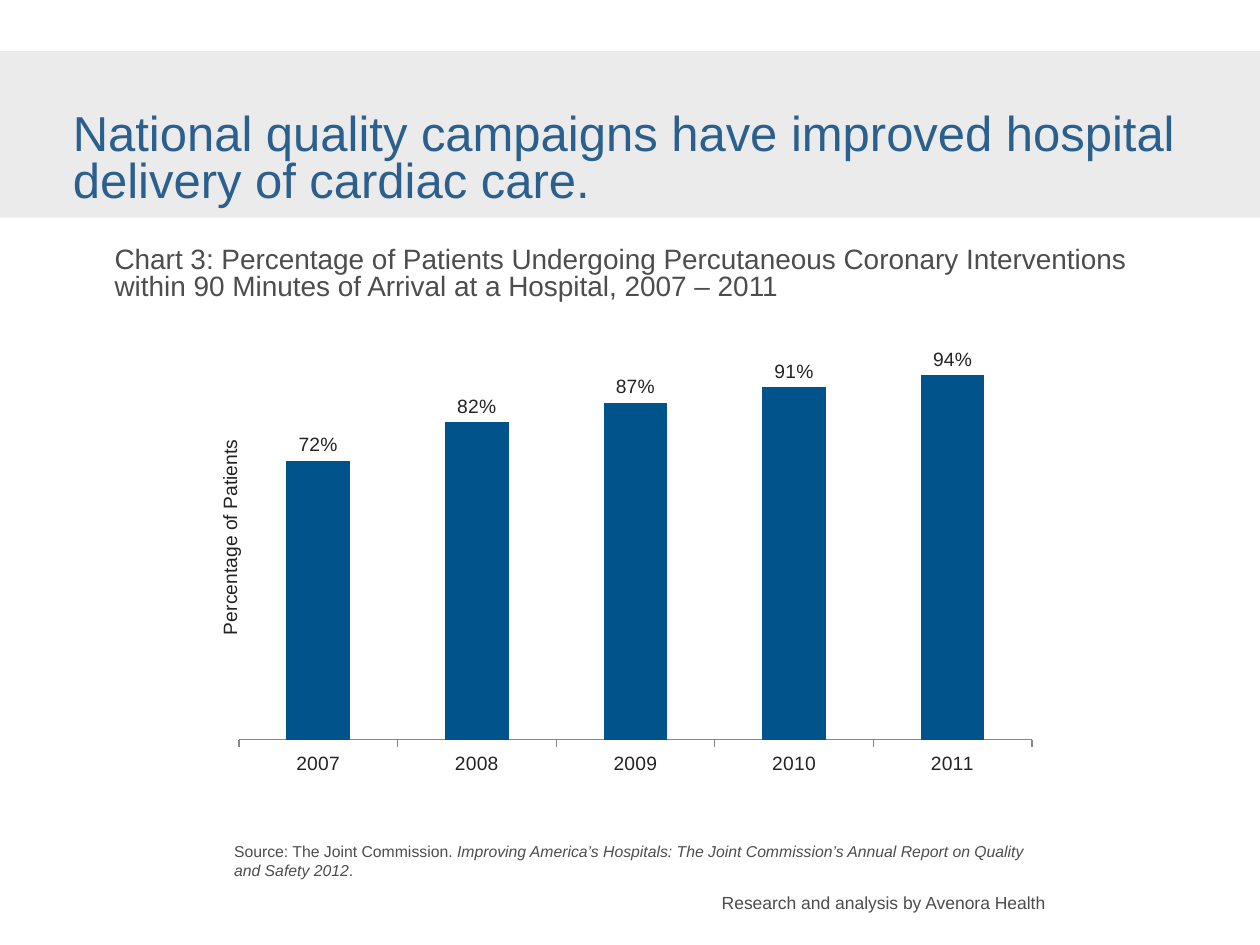
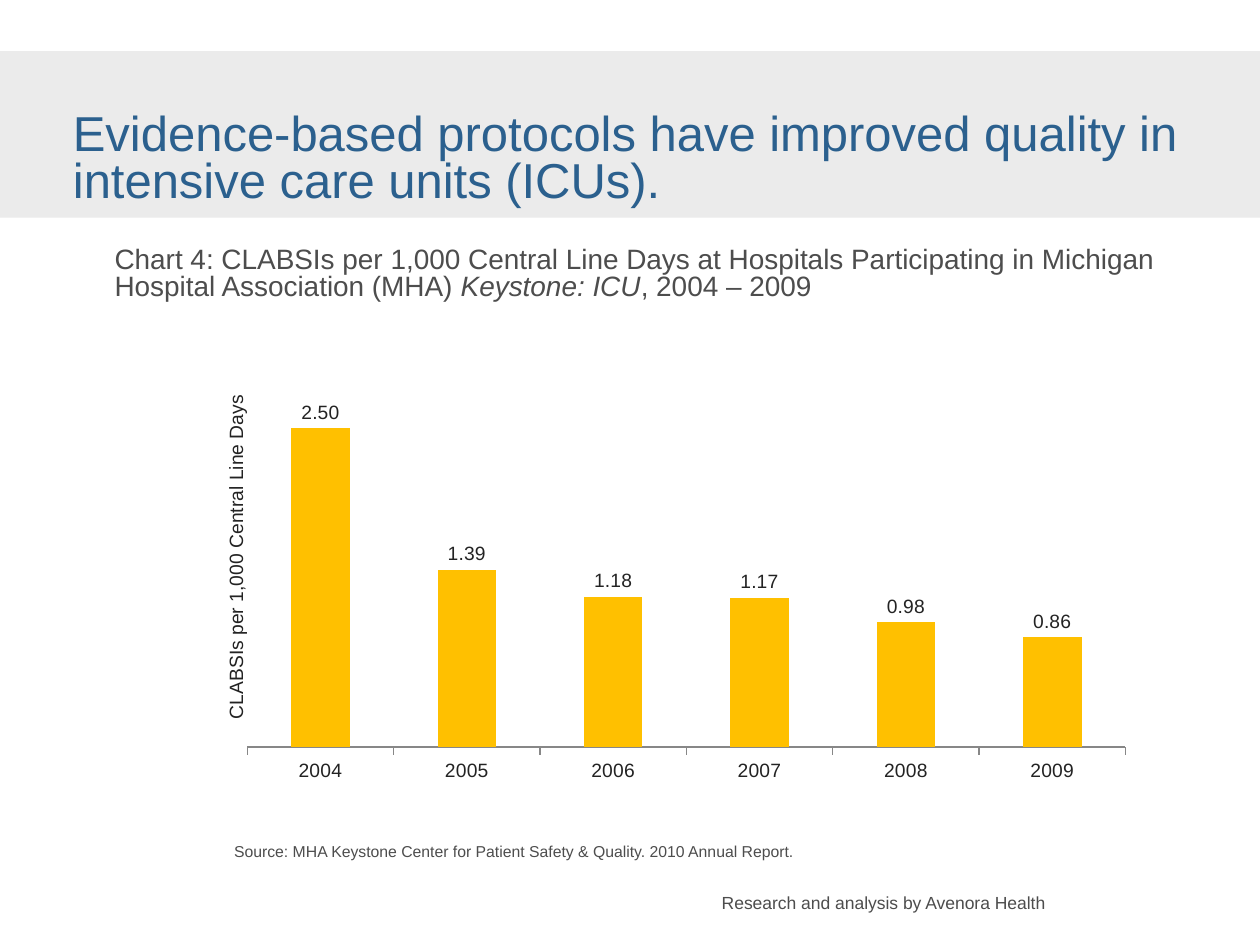
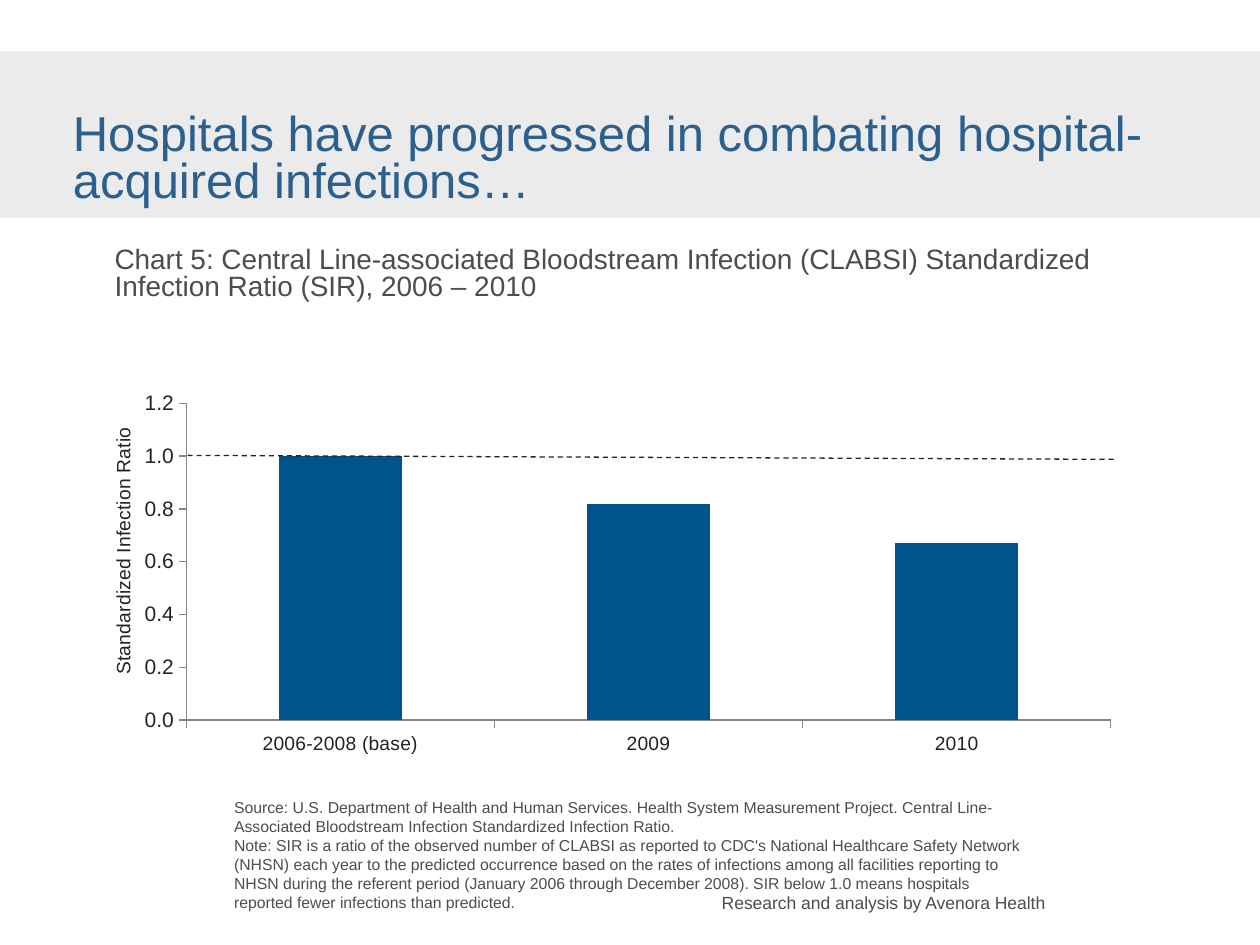
from lxml.etree import Element, SubElement
from pptx import Presentation
from pptx.chart.data import CategoryChartData
from pptx.dml.color import RGBColor
from pptx.enum.chart import XL_CHART_TYPE, XL_LABEL_POSITION, XL_TICK_LABEL_POSITION, XL_TICK_MARK
from pptx.enum.dml import MSO_LINE
from pptx.enum.shapes import MSO_CONNECTOR, MSO_SHAPE
from pptx.enum.text import MSO_ANCHOR, PP_ALIGN
from pptx.oxml.ns import qn
from pptx.util import Cm, Pt

BAND = RGBColor(0xEB, 0xEB, 0xEB)
TITLE = RGBColor(0x2B, 0x60, 0x8E)
GREY = RGBColor(0x4D, 0x4D, 0x4D)
INK = RGBColor(0x23, 0x23, 0x23)
AXIS = RGBColor(0x87, 0x87, 0x87)
BLUE = RGBColor(0x00, 0x54, 0x8B)
GOLD = RGBColor(0xFF, 0xC0, 0x00)
FONT = "Arial"


def place(parent, **spots):
    """Set a manual chart layout; spots are fractions of the chart."""
    node = parent.find(qn("c:layout"))
    if node is None:
        node = Element(qn("c:layout"))
        parent.insert(0, node)
    manual = SubElement(node, qn("c:manualLayout"))
    if "w" in spots:
        SubElement(manual, qn("c:layoutTarget"), val="inner")
    for side in "xy":
        SubElement(manual, qn(f"c:{side}Mode"), val="edge")
    for side, share in spots.items():
        SubElement(manual, qn(f"c:{side}"), val=str(share))


class Deck:
    def __init__(self):
        self.file = Presentation()
        self.file.slide_width, self.file.slide_height = Cm(25.4), Cm(19.05)

    def start(self, title, head, source, top):
        """Add a slide with its band, title, chart heading, source and credit."""
        self.slide = self.file.slides.add_slide(self.file.slide_layouts[6])
        self.band()
        self.text(title, 1.47, 2.29, 22.86, 1.91, size=28, color=TITLE,
                  space=0.8, anchor=MSO_ANCHOR.BOTTOM)
        self.text(head, 2.31, 5, 21.41, 1.09, size=16, space=0.8, anchor=MSO_ANCHOR.BOTTOM)
        self.text(source, 4.72, top, 15.95, 0.8, size=9)
        self.text("Research and analysis by Avenora Health", 14.55, 17.98, 6.71, 0.43)

    def band(self):
        band = self.slide.shapes.add_shape(MSO_SHAPE.RECTANGLE, 0, Cm(1.03), Cm(25.4), Cm(3.36))
        band.shadow.inherit = False
        band.fill.solid()
        band.fill.fore_color.rgb = BAND
        band.line.fill.background()

    def text(self, text, left, top, width, height, size=10, color=GREY, space=None,
             anchor=MSO_ANCHOR.TOP, align=PP_ALIGN.LEFT, turn=0):
        """Add a text box; words between asterisks are italic."""
        box = self.slide.shapes.add_textbox(Cm(left), Cm(top), Cm(width), Cm(height))
        box.rotation = turn
        frame = box.text_frame
        frame.word_wrap = True
        frame.vertical_anchor = anchor
        frame.margin_left = frame.margin_right = frame.margin_top = frame.margin_bottom = 0
        for row, line in enumerate(text.split("\n")):
            para = frame.add_paragraph() if row else frame.paragraphs[0]
            para.alignment = align
            if space:
                para.line_spacing = space
            for part, words in enumerate(line.split("*")):
                run = para.add_run()
                run.text = words
                self.style(run.font, size, color)
                run.font.italic = part % 2 == 1

    def style(self, font, size, color=INK):
        font.name, font.size, font.bold = FONT, Pt(size), False
        font.color.rgb = color

    def side(self, text, mid, centre):
        """Add an upright label centred on the given point."""
        long, high = 7.4, 0.45
        self.text(text, mid - long / 2, centre - high / 2, long, high, size=11,
                  color=INK, align=PP_ALIGN.CENTER, turn=270)

    def chart(self, points, spot, plot, top, color=BLUE, form=None):
        """Add columns; form is the number format of their labels, if any."""
        data = CategoryChartData()
        data.categories = list(points)
        data.add_series("Series 1", list(points.values()))
        chart = self.slide.shapes.add_chart(
            XL_CHART_TYPE.COLUMN_CLUSTERED, *map(Cm, spot), data).chart
        chart.has_legend = chart.has_title = False
        self.style(chart.font, 11)
        place(chart._chartSpace.chart.plotArea, **dict(zip("xywh", plot)))

        bars = chart.plots[0]
        bars.gap_width = 150
        bars.vary_by_categories = False
        fill = bars.series[0].format.fill
        fill.solid()
        fill.fore_color.rgb = color
        if form:
            bars.has_data_labels = True
            labels = bars.data_labels
            labels.show_value = True
            labels.number_format, labels.number_format_is_linked = form, False
            labels.position = XL_LABEL_POSITION.OUTSIDE_END
            self.style(labels.font, 11)

        for axis in chart.category_axis, chart.value_axis:
            axis.has_major_gridlines = False
            axis.major_tick_mark = XL_TICK_MARK.OUTSIDE
            axis.tick_label_position = XL_TICK_LABEL_POSITION.NEXT_TO_AXIS
            axis.format.line.color.rgb = AXIS
            axis.format.line.width = Pt(0.75)
            self.style(axis.tick_labels.font, 11)
        scale = chart.value_axis
        scale.minimum_scale, scale.maximum_scale = 0, top
        scale.visible = not form
        return chart

    def scale(self, axis, title, step, form, **spots):
        """Format a shown value axis and put its title in place."""
        axis.major_unit = step
        labels = axis.tick_labels
        labels.number_format, labels.number_format_is_linked = form, False
        self.style(labels.font, 12)
        frame = axis.axis_title.text_frame
        frame.text = title
        frame._txBody.bodyPr.set("rot", "-5400000")
        self.style(frame.paragraphs[0].runs[0].font, 11)
        place(axis.axis_title._element, **spots)

    def dash(self, *ends):
        line = self.slide.shapes.add_connector(MSO_CONNECTOR.STRAIGHT, *map(Cm, ends))
        line.line.color.rgb = INK
        line.line.width = Pt(0.75)
        line.line.dash_style = MSO_LINE.DASH
        SubElement(line._element.spPr, qn("a:effectLst"))


def main():
    deck = Deck()

    deck.start(
        "National quality campaigns have improved hospital delivery of cardiac care.",
        "Chart 3: Percentage of Patients Undergoing Percutaneous Coronary Interventions "
        "within 90 Minutes of Arrival at a Hospital, 2007 – 2011",
        "Source: The Joint Commission. *Improving America’s Hospitals: The Joint "
        "Commission’s Annual Report on Quality and Safety 2012*.", 16.97)
    deck.chart({"2007": 0.72, "2008": 0.82, "2009": 0.87, "2010": 0.91, "2011": 0.94},
               (4.24, 5.33, 16.94, 11.28), (0.034, 0.157, 0.944, 0.693), 1, form="0%")
    deck.side("Percentage of Patients", 4.62, 10.83)

    deck.start(
        "Evidence-based protocols have improved quality in intensive care units (ICUs).",
        "Chart 4: CLABSIs per 1,000 Central Line Days at Hospitals Participating in "
        "Michigan Hospital Association (MHA) *Keystone: ICU*, 2004 – 2009",
        "Source: MHA Keystone Center for Patient Safety & Quality. 2010 Annual Report.", 16.97)
    deck.chart({"2004": 2.5, "2005": 1.39, "2006": 1.18, "2007": 1.17, "2008": 0.98,
                "2009": 0.86},
               (2.74, 6.2, 20.42, 9.73), (0.11, 0.118, 0.867, 0.793), 3,
               color=GOLD, form="#,##0.00")
    deck.side("CLABSIs per 1,000 Central Line Days", 4.74, 11.23)

    deck.start(
        "Hospitals have progressed in combating hospital-acquired infections…",
        "Chart 5: Central Line-associated Bloodstream Infection (CLABSI) Standardized "
        "Infection Ratio (SIR), 2006 – 2010",
        "Source: U.S. Department of Health and Human Services. Health System Measurement "
        "Project. Central Line-Associated Bloodstream Infection Standardized Infection Ratio.\n"
        "Note: SIR is a ratio of the observed number of CLABSI as reported to CDC's National "
        "Healthcare Safety Network (NHSN) each year to the predicted occurrence based on the "
        "rates of infections among all facilities reporting to NHSN during the referent period "
        "(January 2006 through December 2008). SIR below 1.0 means hospitals reported fewer "
        "infections than predicted.", 16.08)
    chart = deck.chart({"2006-2008 (base)": 1, "2009": 0.82, "2010": 0.67},
                       (0.46, 7.11, 24.05, 8.97), (0.137, 0.114, 0.775, 0.712), 1.2)
    deck.scale(chart.value_axis, "Standardized Infection Ratio", 0.2, "#,##0.0",
               x=0.07, y=0.16)
    deck.dash(3.78, 9.18, 22.45, 9.26)

    deck.file.save("out.pptx")


if __name__ == "__main__":
    main()
